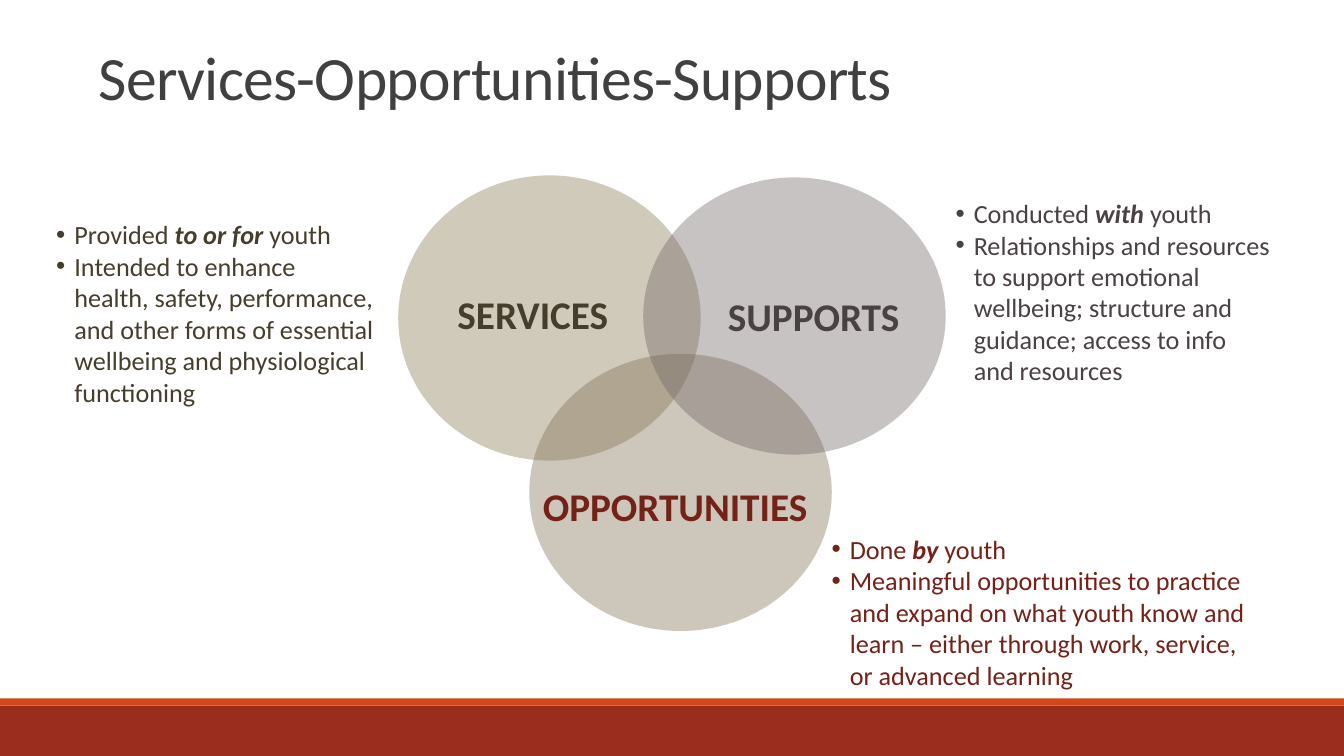
from lxml.etree import SubElement
from pptx import Presentation
from pptx.dml.color import RGBColor
from pptx.enum.shapes import MSO_SHAPE as Shape
from pptx.enum.text import MSO_ANCHOR as Anchor, PP_ALIGN as Align
from pptx.oxml.ns import qn
from pptx.util import Pt

PX = 9144
FONT = "Calibri"
BRICK = RGBColor(0x9B, 0x2D, 0x1F)
ORANGE = RGBColor(0xD3, 0x48, 0x17)
GREY = RGBColor(0x40, 0x40, 0x40)
SAND = RGBColor(0x8B, 0x7B, 0x57)
EARTH = RGBColor(0x7C, 0x6B, 0x4D)
MAUVE = RGBColor(0x6E, 0x62, 0x63)
OLIVE = RGBColor(0x46, 0x3E, 0x2C)
PLUM = RGBColor(0x49, 0x41, 0x42)
WINE = RGBColor(0x74, 0x22, 0x17)

deck = Presentation()
deck.slide_width, deck.slide_height = 1333 * PX, 750 * PX
slide = deck.slides.add_slide(deck.slide_layouts[6])


def add_form(kind, box, color, alpha=100):
    form = slide.shapes.add_shape(kind, *[n * PX for n in box])
    form.shadow.inherit = False
    form.line.fill.background()
    form.fill.solid()
    form.fill.fore_color.rgb = color
    if alpha < 100:
        tint = form.fill._xPr.find(".//" + qn("a:srgbClr"))
        SubElement(tint, qn("a:alpha"), val=str(alpha * 1000))


def add_text(box, wrap=True):
    frame = slide.shapes.add_textbox(*[n * PX for n in box]).text_frame
    frame.word_wrap = wrap
    return frame


add_form(Shape.RECTANGLE, (0, 700, 1333, 50), BRICK)
add_form(Shape.RECTANGLE, (0, 693, 1333, 7), ORANGE)

frame = add_text((88, 0, 850, 117))
frame.vertical_anchor = Anchor.BOTTOM
title = frame.paragraphs[0]
title.line_spacing = 0.85
run = title.add_run()
run.text = "Services-Opportunities-Supports"
run.font.name, run.font.size = FONT, Pt(44)
run.font.color.rgb = GREY
run.font._element.set("spc", "-50")

for box, color, alpha in [
    ((395, 174, 300, 283), SAND, 40),
    ((525, 351, 300, 275), EARTH, 38),
    ((638, 176, 300, 275), MAUVE, 38),
]:
    add_form(Shape.OVAL, box, color, alpha)

for label, box, color in [
    ("SERVICES", (443, 283, 171, 57), OLIVE),
    ("SUPPORTS", (711, 285, 192, 57), PLUM),
    ("OPPORTUNITIES", (527, 474, 285, 57), WINE),
]:
    para = add_text(box, False).paragraphs[0]
    para.text = label
    para.alignment = Align.CENTER
    para.font.name, para.font.size, para.font.bold = FONT, Pt(28), True
    para.font.color.rgb = color

for box, color, lead, detail in [
    ((46, 212, 343, 199), OLIVE, ("Provided ", "to or for", " youth"),
     "Intended to enhance\nhealth, safety, performance,\n"
     "and other forms of essential\nwellbeing and physiological\nfunctioning"),
    ((938, 191, 344, 199), PLUM, ("Conducted ", "with", " youth"),
     "Relationships and resources\nto support emotional\n"
     "wellbeing; structure and\nguidance; access to info\nand resources"),
    ((815, 524, 462, 167), WINE, ("Done ", "by", " youth"),
     "Meaningful opportunities to practice\n"
     "and expand on what youth know and\n"
     "learn – either through work, service,\nor advanced learning"),
]:
    frame = add_text(box)
    first, second = frame.paragraphs[0], frame.add_paragraph()
    for part in lead:
        run = first.add_run()
        run.text = part
        if part == lead[1]:
            run.font.bold = run.font.italic = True
    second.text = detail
    for para in (first, second):
        props = para._p.get_or_add_pPr()
        props.set("marL", str(18 * PX))
        props.set("indent", str(-18 * PX))
        SubElement(props, qn("a:buFont"), typeface="Arial")
        SubElement(props, qn("a:buChar"), char="•")
        para.font.name, para.font.size = FONT, Pt(18.7)
        para.font.color.rgb = color

deck.save("out.pptx")
